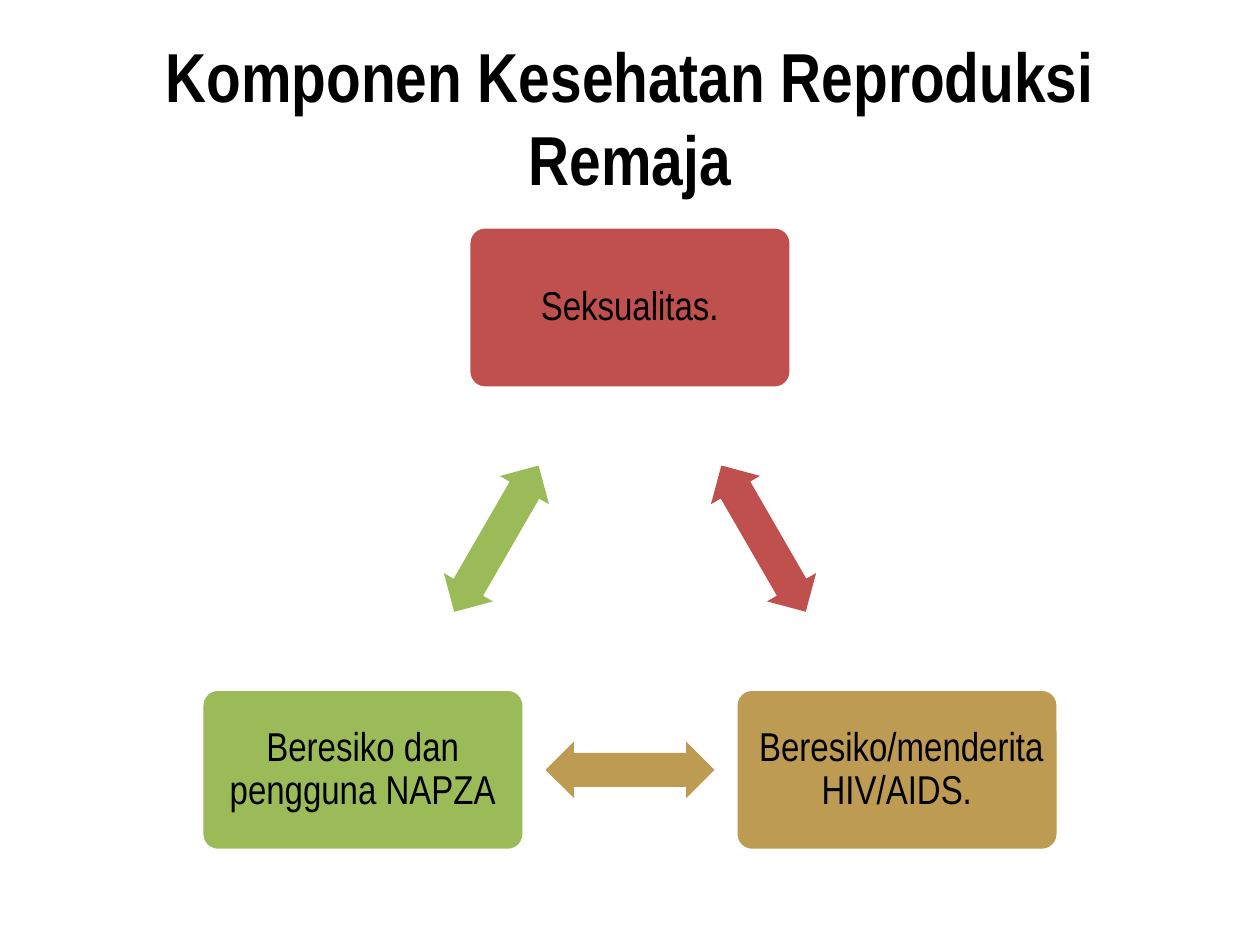
from pptx import Presentation
from pptx.dml.color import RGBColor
from pptx.enum import shapes, text
from pptx.util import Pt

BLACK = RGBColor(0x00, 0x00, 0x00)
WHITE = RGBColor(0xFF, 0xFF, 0xFF)
RED = RGBColor(0xC0, 0x50, 0x4D)
TAN = RGBColor(0xBD, 0x9B, 0x53)
GREEN = RGBColor(0x9B, 0xBB, 0x59)

FONT = "Arial Narrow"
NODE_W, NODE_H = 184.3, 92.2
ARROW_W, ARROW_H = 96.5, 32.4

# Centre, colour and label of each component, clockwise from the top
COMPONENTS = [
    ((360, 175.7), RED, "Seksualitas."),
    ((512.6, 439.9), TAN, " Beresiko/menderita HIV/AIDS."),
    ((207.4, 439.9), GREEN, "Beresiko dan pengguna NAPZA"),
]


def write(shape, wording, size, bold=False):
    frame = shape.text_frame
    frame.word_wrap = True
    frame.vertical_anchor = text.MSO_ANCHOR.MIDDLE
    para = frame.paragraphs[0]
    para.alignment = text.PP_ALIGN.CENTER
    span = para.add_run()
    span.text = wording
    span.font.name = FONT
    span.font.size = Pt(size)
    span.font.bold = bold
    span.font.color.rgb = BLACK
    return para


def add_title(page, wording):
    box = page.shapes.add_textbox(Pt(36), Pt(21.6), Pt(648), Pt(90))
    write(box, wording, 39.6, bold=True)


def add_centred(page, kind, centre, width, height, colour):
    x, y = centre
    shape = page.shapes.add_shape(
        kind, Pt(x - width / 2), Pt(y - height / 2), Pt(width), Pt(height))
    shape.shadow.inherit = False
    shape.fill.solid()
    shape.fill.fore_color.rgb = colour
    shape.line.fill.background()
    return shape


def add_component(page, centre, colour, label):
    node = add_centred(page, shapes.MSO_SHAPE.ROUNDED_RECTANGLE, centre,
                       NODE_W, NODE_H, colour)
    node.adjustments[0] = 0.1
    node.line.color.rgb = WHITE
    node.line.width = Pt(2)
    frame = node.text_frame
    # The rounded corners already inset the text a little
    frame.margin_left = frame.margin_right = Pt(4.5)
    frame.margin_top = frame.margin_bottom = Pt(4.5)
    para = write(node, label, 23)
    para.line_spacing = 0.9
    para.space_after = Pt(8)


def add_link(page, start, end, colour, angle):
    middle = [(a + b) / 2 for a, b in zip(start, end)]
    arrow = add_centred(page, shapes.MSO_SHAPE.LEFT_RIGHT_ARROW, middle,
                        ARROW_W, ARROW_H, colour)
    arrow.adjustments[0] = 0.6
    arrow.adjustments[1] = 0.5
    arrow.rotation = angle


def main():
    deck = Presentation()
    deck.slide_width, deck.slide_height = Pt(720), Pt(540)
    page = deck.slides.add_slide(deck.slide_layouts[6])

    add_title(page, "Komponen Kesehatan Reproduksi Remaja")

    # Cycle: each component, then the arrow to the next one
    for i, (centre, colour, label) in enumerate(COMPONENTS):
        following = COMPONENTS[(i + 1) % len(COMPONENTS)][0]
        add_component(page, centre, colour, label)
        add_link(page, centre, following, colour, 60 + 120 * i)

    deck.save("out.pptx")


if __name__ == "__main__":
    main()
